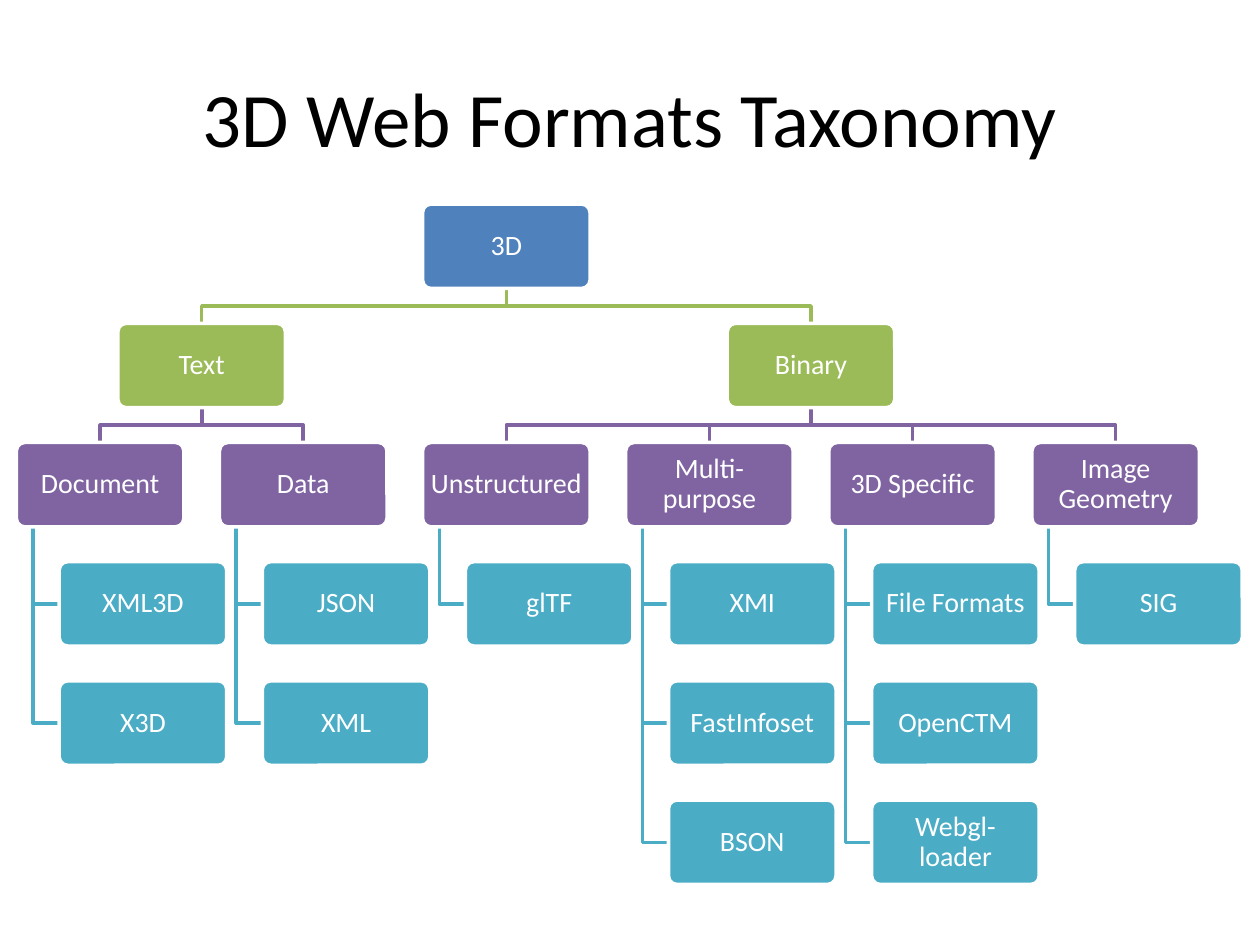
"""Draws the 3D web formats taxonomy as a tree of boxes on one slide."""
import pptx
import pptx.util
import pptx.dml.color
import pptx.enum.shapes
import pptx.enum.text

HUES = {"root": "4F81BD", "branch": "9BBB59", "group": "8064A2",
        "leaf": "4BACC6", "white": "FFFFFF", "black": "000000"}
LEFT, TOP = 0.13, 1.62
STEP, DROP = (8.19 - LEFT) / 5, (6.35 - TOP) / 5
WIDE, HIGH, SHIFT = 1.33, 0.67, 0.34
TREE = {
    "Text": {"Document": ["XML3D", "X3D"], "Data": ["JSON", "XML"]},
    "Binary": {"Unstructured": ["glTF"],
               "Multi-purpose": ["XMI", "FastInfoset", "BSON"],
               "3D Specific": ["File Formats", "OpenCTM", "Webgl-loader"],
               "Image Geometry": ["SIG"]},
}


class Chart:
    def __init__(self, slide, font="Calibri"):
        self.slide = slide
        self.font = font

    def hue(self, name):
        return pptx.dml.color.RGBColor.from_string(HUES[name])

    def label(self, frame, text, size, hue):
        frame.word_wrap = True
        frame.vertical_anchor = pptx.enum.text.MSO_ANCHOR.MIDDLE
        para = frame.paragraphs[0]
        para.alignment = pptx.enum.text.PP_ALIGN.CENTER
        run = para.add_run()
        run.text = text
        run.font.name = self.font
        run.font.size = pptx.util.Pt(size)
        run.font.color.rgb = self.hue(hue)
        return para

    def title(self, text):
        area = [pptx.util.Inches(n) for n in (0.5, 0.3, 9, 1.25)]
        box = self.slide.shapes.add_textbox(*area)
        self.label(box.text_frame, text, 44, "black")

    def spot(self, col, row, kind):
        return LEFT + col * STEP + (SHIFT if kind == "leaf" else 0), TOP + row * DROP

    def box(self, text, col, row, kind):
        area = [pptx.util.Inches(n) for n in (*self.spot(col, row, kind), WIDE, HIGH)]
        form = pptx.enum.shapes.MSO_SHAPE.ROUNDED_RECTANGLE
        shape = self.slide.shapes.add_shape(form, *area)
        shape.adjustments[0] = 0.1
        shape.shadow.inherit = False
        shape.fill.solid()
        shape.fill.fore_color.rgb = self.hue(kind)
        shape.line.color.rgb = self.hue("white")
        shape.line.width = pptx.util.Pt(2)
        frame = shape.text_frame
        frame.margin_left = frame.margin_right = pptx.util.Inches(0.04)
        frame.margin_top = frame.margin_bottom = pptx.util.Inches(0.04)
        self.label(frame, text, 16, "white").line_spacing = 0.9

    def link(self, start, end, kind):
        x, y = self.spot(*start, "group")
        u, v = self.spot(*end, kind)
        y += HIGH
        if kind == "leaf":
            x, v = x + WIDE / 10, v + HIGH / 2
            route = [(x, y), (x, v), (u, v)]
        else:
            x, u, mid = x + WIDE / 2, u + WIDE / 2, (y + v) / 2
            route = [(x, y), (x, mid), (u, mid), (u, v)]
        route = [tuple(pptx.util.Inches(n) for n in point) for point in route]
        maker = self.slide.shapes.build_freeform(*route[0])
        maker.add_line_segments(route[1:], close=False)
        line = maker.convert_to_shape()
        line.shadow.inherit = False
        line.fill.background()
        line.line.color.rgb = self.hue(kind)
        line.line.width = pptx.util.Pt(2)


def plan():
    nodes, links, col = [("3D", 2, 0, "root")], [], 0
    for branch, groups in TREE.items():
        mid = col + (len(groups) - 1) / 2
        nodes.append((branch, mid, 1, "branch"))
        links.append(((2, 0), (mid, 1), "branch"))
        for group, leaves in groups.items():
            nodes.append((group, col, 2, "group"))
            links.append(((mid, 1), (col, 2), "group"))
            for row, leaf in enumerate(leaves, 3):
                nodes.append((leaf, col, row, "leaf"))
                links.append(((col, 2), (col, row), "leaf"))
            col += 1
    return nodes, links


def main():
    deck = pptx.Presentation()
    deck.slide_width = pptx.util.Inches(10)
    deck.slide_height = pptx.util.Inches(7.5)
    chart = Chart(deck.slides.add_slide(deck.slide_layouts[6]))
    nodes, links = plan()
    for link in links:
        chart.link(*link)
    for node in nodes:
        chart.box(*node)
    chart.title("3D Web Formats Taxonomy")
    deck.save("out.pptx")


if __name__ == "__main__":
    main()
